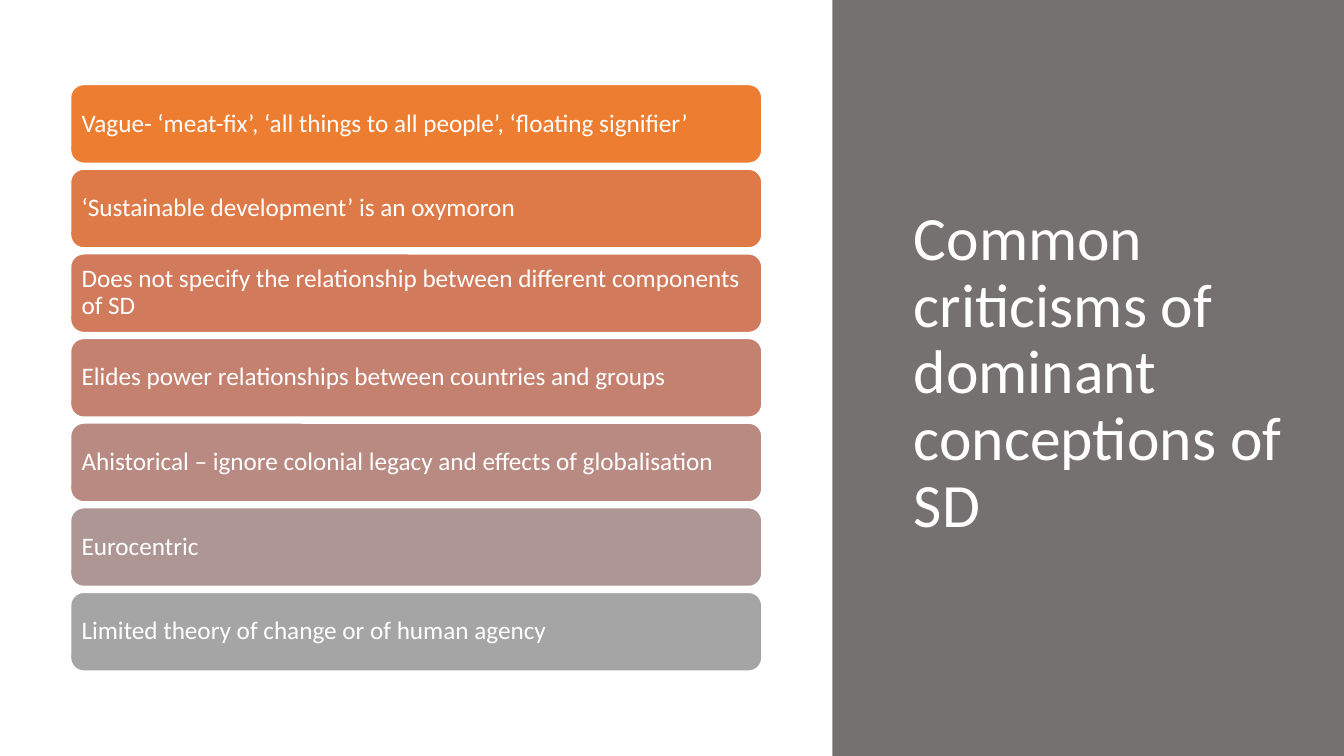
from pptx import Presentation
from pptx.dml.color import RGBColor
from pptx.enum.shapes import MSO_SHAPE
from pptx.enum.text import MSO_ANCHOR, MSO_AUTO_SIZE, PP_ALIGN
from pptx.util import Cm, Pt

SLIDE_WIDTH, SLIDE_HEIGHT = 33.87, 19.05
WHITE = "FFFFFF"

TITLE = "Common criticisms of dominant conceptions of SD"
CRITICISMS = [
    ("Vague- ‘meat-fix’, ‘all things to all people’, ‘floating signifier’", "ED7D31"),
    ("‘Sustainable development’ is an oxymoron", "DE7A47"),
    ("Does not specify the relationship between different components of SD", "D17B5C"),
    ("Elides power relationships between countries and groups", "C48170"),
    ("Ahistorical – ignore colonial legacy and effects of globalisation", "B98A82"),
    ("Eurocentric", "AE9694"),
    ("Limited theory of change or of human agency", "A5A5A5"),
]


def color(hex_string):
    return RGBColor.from_string(hex_string)


def write_text(shape, text, size, font="Calibri", hex_color=WHITE, inset=(0.25, 0.13)):
    frame = shape.text_frame
    frame.word_wrap = True
    frame.auto_size = MSO_AUTO_SIZE.NONE
    frame.vertical_anchor = MSO_ANCHOR.MIDDLE
    frame.margin_left = frame.margin_right = Cm(inset[0])
    frame.margin_top = frame.margin_bottom = Cm(inset[1])
    paragraph = frame.paragraphs[0]
    paragraph.alignment = PP_ALIGN.LEFT
    paragraph.line_spacing = 0.9
    run = paragraph.add_run()
    run.text = text
    run.font.name = font
    run.font.size = Pt(size)
    run.font.color.rgb = color(hex_color)


def add_filled_shape(shapes, kind, left, top, width, height, fill, line=None):
    shape = shapes.add_shape(kind, Cm(left), Cm(top), Cm(width), Cm(height))
    shape.shadow.inherit = False
    shape.fill.solid()
    shape.fill.fore_color.rgb = color(fill)
    if line:
        shape.line.color.rgb = color(line)
        shape.line.width = Pt(1)
    else:
        shape.line.fill.background()
    return shape


def add_title_panel(slide, left, top, width, height):
    panel = add_filled_shape(slide.shapes, MSO_SHAPE.RECTANGLE,
                             left, top, width, height, "767171")
    # The panel goes behind the title placeholder
    title = slide.shapes.title
    title.element.addprevious(panel.element)
    title.left, title.top = Cm(left + 1.8), Cm(top + 1.78)
    title.width, title.height = Cm(width - 2.7), Cm(height - 3.76)
    write_text(title, TITLE, size=44)


def add_criticism_bars(slide, left, top, width, height, gap=0.15):
    group = slide.shapes.add_group_shape()
    pitch = (height + gap) / len(CRITICISMS)
    for index, (text, fill) in enumerate(CRITICISMS):
        bar = add_filled_shape(group.shapes, MSO_SHAPE.ROUNDED_RECTANGLE, left,
                               top + index * pitch, width, pitch - gap, fill, WHITE)
        write_text(bar, text, size=18, inset=(0.18, 0.18))


def main():
    presentation = Presentation()
    presentation.slide_width = Cm(SLIDE_WIDTH)
    presentation.slide_height = Cm(SLIDE_HEIGHT)
    slide = presentation.slides.add_slide(presentation.slide_layouts[5])
    # Title on the right, list of criticisms on the left
    add_title_panel(slide, 20.98, 0, SLIDE_WIDTH - 20.98, SLIDE_HEIGHT)
    add_criticism_bars(slide, 1.78, 2.13, 17.42, 14.78)
    presentation.save("out.pptx")


if __name__ == "__main__":
    main()
